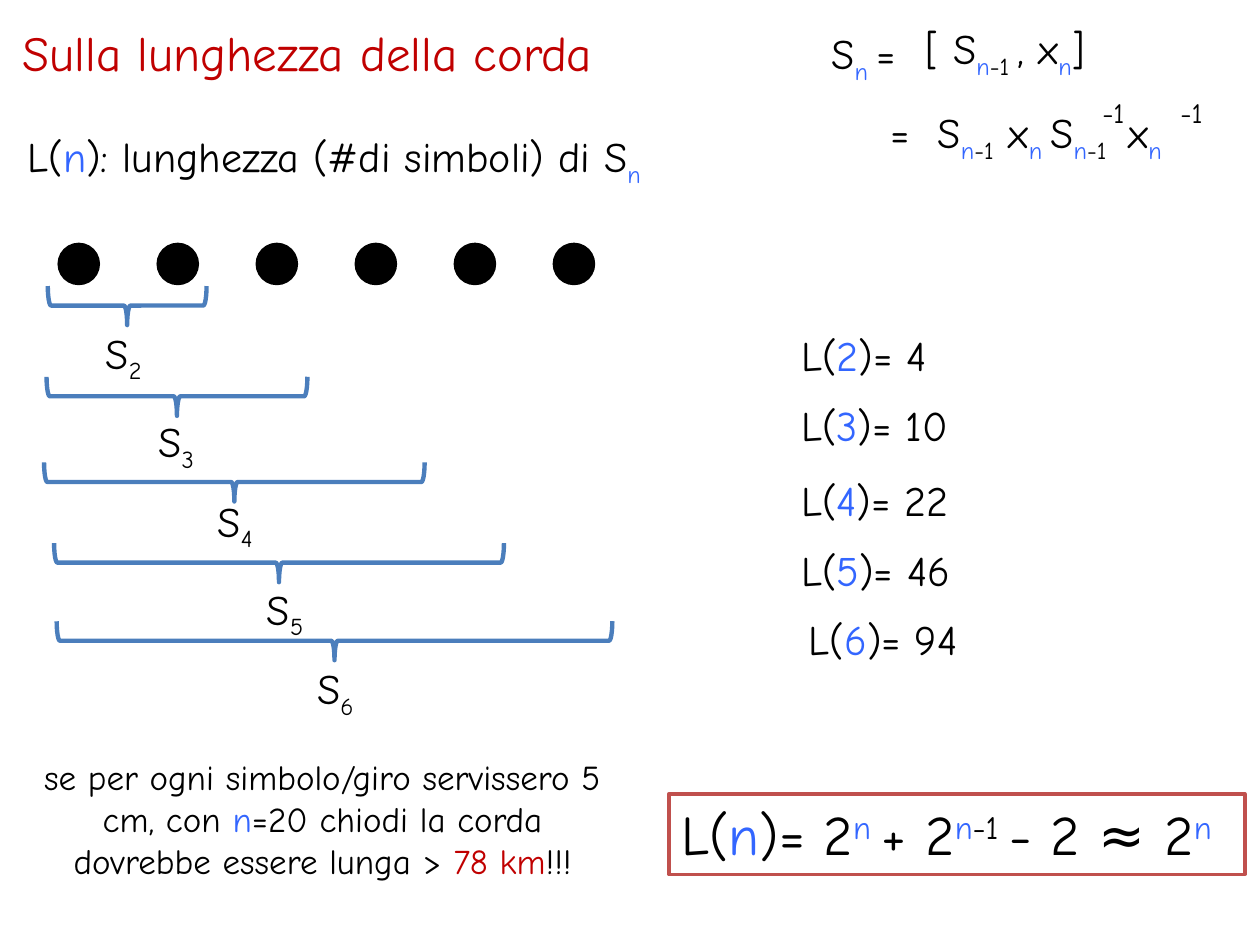
import pptx
import pptx.dml.color
import pptx.enum.shapes
import pptx.enum.text
import pptx.util

Inches = pptx.util.Inches
Pt = pptx.util.Pt
Shape = pptx.enum.shapes.MSO_SHAPE
Align = pptx.enum.text.PP_ALIGN
Anchor = pptx.enum.text.MSO_ANCHOR

COLORS = {
    "text": "000000",
    "index": "3366FF",
    "accent": "C00000",
    "brace": "4B7EBC",
    "frame": "C0504D",
    "paper": "FFFFFF",
}
FONT = "Comic Neue"
SUB = {"baseline": -25000}
SUPER = {"baseline": 30000}
SUB_N = ("n", "index", SUB)
SUPER_N = ("n", "index", SUPER)
SUB_MINUS_ONE = ("-1", "text", SUB)


def rgb(name):
    return pptx.dml.color.RGBColor.from_string(COLORS[name])


def plain(text):
    return (text, "text", {})


def sub_gap(spacing):
    return (" ", "text", {**SUB, "spc": spacing})


def write(shape, spans, size, align=Align.LEFT, anchor=Anchor.TOP):
    frame = shape.text_frame
    frame_format = {"word_wrap": True, "vertical_anchor": anchor}
    for name, value in frame_format.items():
        setattr(frame, name, value)
    para = frame.paragraphs[0]
    para.alignment = align
    for text, color, marks in spans:
        span = para.add_run()
        span.text = text
        for name, value in {"name": FONT, "size": Pt(size)}.items():
            setattr(span.font, name, value)
        span.font.color.rgb = rgb(color)
        for name, value in marks.items():
            span.font._element.set(name, str(value))


def add_text(page, left, top, width, height, spans, size=24, align=Align.LEFT):
    box = page.shapes.add_textbox(
        Inches(left), Inches(top), Inches(width), Inches(height))
    write(box, spans, size, align)


def add_outline(page, kind, left, top, width, height, line, weight, fill=None):
    shape = page.shapes.add_shape(
        kind, Inches(left), Inches(top), Inches(width), Inches(height))
    shape.shadow.inherit = False
    if fill:
        shape.fill.solid()
        shape.fill.fore_color.rgb = rgb(fill)
    else:
        shape.fill.background()
    shape.line.color.rgb = rgb(line)
    shape.line.width = Pt(weight)
    return shape


def add_heading(page, left, top, width, height):
    title = page.shapes.title
    place = {"left": left, "top": top, "width": width, "height": height}
    for name, value in place.items():
        setattr(title, name, Inches(value))
    write(title, [("Sulla lunghezza della corda", "accent", {})], 28,
          anchor=Anchor.MIDDLE)


def add_recurrence(page, left, top):
    add_text(page, left + 0.75, top, 2.68, 0.5, [
        plain("[ S"), SUB_N, ("-1 ", "text", SUB), plain(", x"), SUB_N,
        plain("]")])
    add_text(page, left, top + 0.04, 1.1, 0.5, [
        plain("S"), ("n ", "index", SUB), plain("=")])
    add_text(page, left + 0.47, top + 0.67, 2.99, 0.5, [
        ("=", "text", {"spc": 780}), plain(" S"), SUB_N, SUB_MINUS_ONE,
        sub_gap(400), plain("x"), ("n ", "index", SUB), plain("S"), SUB_N,
        SUB_MINUS_ONE, sub_gap(800), plain("x"), SUB_N])
    for offset in (2.15, 2.77):
        add_text(page, left + offset, top + 0.58, 0.62, 0.37, [plain("-1")], 16)


def add_nails(page, left, top, count=6, pitch=0.786, size=0.31):
    for index in range(count):
        add_outline(page, Shape.OVAL, left + index * pitch, top, size, size,
                    "text", 2, "text")


def add_spans(page, left, top):
    depth = 0.31
    braces = [
        (0.03, 0, 1.26, 0.39, 0.28),
        (0.02, 0.72, 2.07, 0.81, 0.98),
        (0, 1.4, 3.02, 1.28, 1.61),
        (0.08, 2.04, 3.57, 1.67, 2.31),
        (0.1, 2.66, 4.41, 2.07, 2.94),
    ]
    for order, (start, drop, length, label_x, label_y) in enumerate(braces, 2):
        center_x = left + start + length / 2
        center_y = top + drop + depth / 2
        brace = add_outline(
            page, Shape.LEFT_BRACE, center_x - depth / 2,
            center_y - length / 2, depth, length, "brace", 2.5)
        brace.rotation = 270
        add_text(page, left + label_x, top + label_y, 0.72, 0.5, [
            plain("S"), (str(order), "text", SUB)])


def add_lengths(page, left, top):
    rows = [(0, 0), (0, 0.55), (0, 1.15), (0, 1.7), (0.06, 2.25)]
    for order, (shift, drop) in enumerate(rows, 2):
        length = 3 * 2 ** (order - 1) - 2
        add_text(page, left + shift, top + drop, 3.15, 0.5, [
            plain("L("), (str(order), "index", {}), plain(f")= {length}")])


def add_definition(page, left, top, width, height):
    add_text(page, left, top, width, height, [
        plain("L("), ("n", "index", {}),
        plain("): lunghezza (#di simboli) di S"), SUB_N])


def add_formula(page, left, top, width, height):
    box = add_outline(page, Shape.RECTANGLE, left, top, width, height,
                      "frame", 2, "paper")
    write(box, [
        plain("L("), ("n", "index", {}), plain(")= 2"),
        ("n ", "index", SUPER), plain("+ 2"), SUPER_N,
        ("-1 ", "text", SUPER), plain("- 2 ≈ 2"), SUPER_N], 32)


def add_remark(page, left, top, width, height):
    add_text(page, left, top, width, height, [
        plain("se per ogni simbolo/giro servissero 5 cm, con "),
        ("n", "index", {}),
        plain("=20 chiodi la corda dovrebbe essere lunga > "),
        ("78 km", "accent", {}), plain("!!!")], 20, Align.CENTER)


def main():
    deck = pptx.Presentation()
    deck.slide_width = Inches(10)
    deck.slide_height = Inches(7.5)
    page = deck.slides.add_slide(deck.slide_layouts[5])
    add_heading(page, 0.08, 0.06, 9.65, 0.7)
    add_recurrence(page, 6.5, 0.13)
    add_definition(page, 0.12, 0.99, 5.51, 0.5)
    add_nails(page, 0.47, 1.94)
    add_spans(page, 0.35, 2.27)
    add_lengths(page, 6.26, 2.57)
    add_remark(page, 0.2, 5.95, 4.72, 1.11)
    add_formula(page, 5.31, 6.3, 4.57, 0.64)
    deck.save("out.pptx")


if __name__ == "__main__":
    main()
